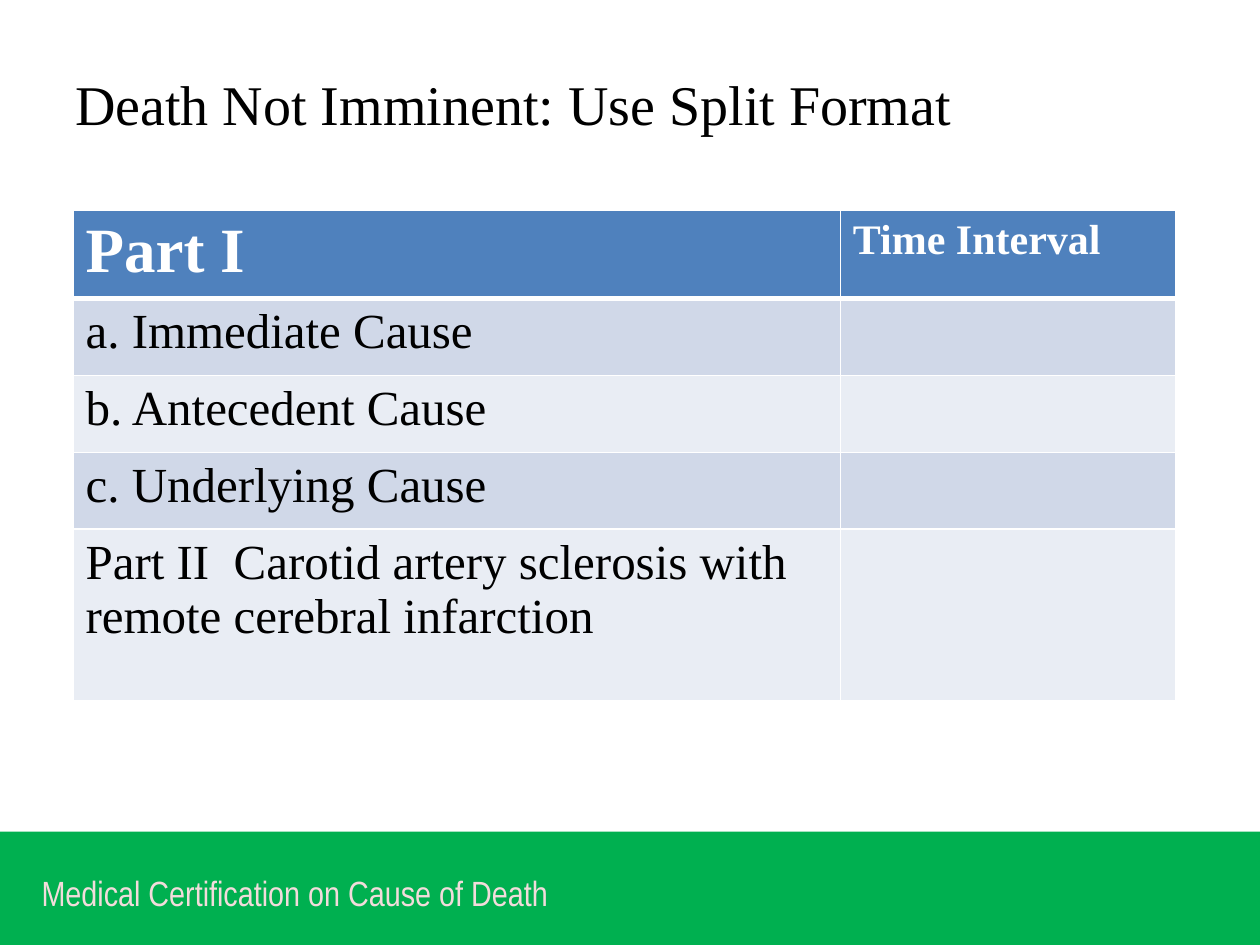
from dataclasses import dataclass

import pptx
import pptx.dml.color
import pptx.enum.shapes
import pptx.enum.text
import pptx.oxml
import pptx.oxml.ns
import pptx.util
from pptx.util import Inches


@dataclass(frozen=True)
class Theme:
    serif: str = "Times New Roman"
    narrow: str = "Arial Narrow"
    black: str = "000000"
    white: str = "FFFFFF"
    footer_green: str = "00B050"
    footer_pink: str = "F2DCDB"
    header_blue: str = "4F81BD"
    bands: tuple = ("D0D8E8", "E9EDF4")
    title_size: int = 32
    footer_size: int = 20
    part_size: int = 36
    interval_size: int = 24
    cause_size: int = 28


def rgb(color):
    return pptx.dml.color.RGBColor.from_string(color)


class SlideBuilder:
    def __init__(self, slide, theme):
        self.slide = slide
        self.theme = theme

    def set_text(self, paragraph, text, size, color, face, bold=False):
        paragraph.text = text
        font = paragraph.font
        font.name = face
        font.size = pptx.util.Pt(size)
        font.bold = bold
        font.color.rgb = rgb(color)

    def band(self, left, top, width, height, color):
        band = self.slide.shapes.add_shape(
            pptx.enum.shapes.MSO_SHAPE.RECTANGLE, left, top, width, height)
        band.shadow.inherit = False
        band.fill.solid()
        band.fill.fore_color.rgb = rgb(color)
        band.line.fill.background()

    def text(self, left, top, width, height, text, size, color, face, inset=(0.1, 0.05)):
        frame = self.slide.shapes.add_textbox(left, top, width, height).text_frame
        frame.word_wrap = True
        frame.vertical_anchor = pptx.enum.text.MSO_ANCHOR.MIDDLE
        frame.margin_left = frame.margin_right = Inches(inset[0])
        frame.margin_top = frame.margin_bottom = Inches(inset[1])
        self.set_text(frame.paragraphs[0], text, size, color, face)

    def borders(self, cell, widths):
        """Draw white cell borders; widths maps a side (L, R, T, B) to points."""
        properties = cell._tc.get_or_add_tcPr()
        for position, (side, points) in enumerate(widths.items()):
            line = pptx.oxml.parse_xml(
                f'<a:ln{side} {pptx.oxml.ns.nsdecls("a")} w="{pptx.util.Pt(points)}">'
                f'<a:solidFill><a:srgbClr val="{self.theme.white}"/></a:solidFill>'
                f'</a:ln{side}>')
            properties.insert(position, line)

    def cause_table(self, left, top, column_widths, row_heights, headings, causes):
        theme = self.theme
        table = self.slide.shapes.add_table(
            len(row_heights), len(column_widths), left, top,
            Inches(sum(column_widths)), Inches(sum(row_heights))).table
        for column, width in zip(table.columns, column_widths):
            column.width = Inches(width)
        for row, height in zip(table.rows, row_heights):
            row.height = Inches(height)

        for index, row in enumerate(table.rows):
            fill = theme.bands[(index - 1) % 2] if index else theme.header_blue
            widths = {"L": 1, "R": 1, "T": 3 if index == 1 else 1,
                      "B": 1 if index else 3}
            for cell in row.cells:
                cell.fill.solid()
                cell.fill.fore_color.rgb = rgb(fill)
                self.borders(cell, widths)

        for column, (heading, size) in enumerate(headings):
            self.set_text(table.cell(0, column).text_frame.paragraphs[0],
                          heading, size, theme.white, theme.serif, bold=True)
        for row, cause in enumerate(causes, start=1):
            self.set_text(table.cell(row, 0).text_frame.paragraphs[0],
                          cause, theme.cause_size, theme.black, theme.serif)


def main():
    theme = Theme()
    deck = pptx.Presentation()
    deck.slide_width, deck.slide_height = Inches(10), Inches(7.5)
    builder = SlideBuilder(deck.slides.add_slide(deck.slide_layouts[6]), theme)

    builder.band(Inches(0), Inches(6.6), Inches(10), Inches(0.92), theme.footer_green)
    builder.text(Inches(0.33), Inches(6.85), Inches(5.17), Inches(0.47),
                 "Medical Certification on Cause of Death",
                 theme.footer_size, theme.footer_pink, theme.narrow, inset=(0, 0))
    builder.text(Inches(0.5), Inches(0.3), Inches(9), Inches(1.03),
                 "Death Not Imminent: Use Split Format",
                 theme.title_size, theme.black, theme.serif)
    builder.cause_table(
        Inches(0.58), Inches(1.67),
        column_widths=[6.09, 2.66],
        row_heights=[0.64] + [0.61] * 3 + [1.36],
        headings=[("Part I", theme.part_size),
                  ("Time Interval", theme.interval_size)],
        causes=["a. Immediate Cause", "b. Antecedent Cause", "c. Underlying Cause",
                "Part II  Carotid artery sclerosis with remote cerebral infarction"])
    deck.save("out.pptx")


if __name__ == "__main__":
    main()
